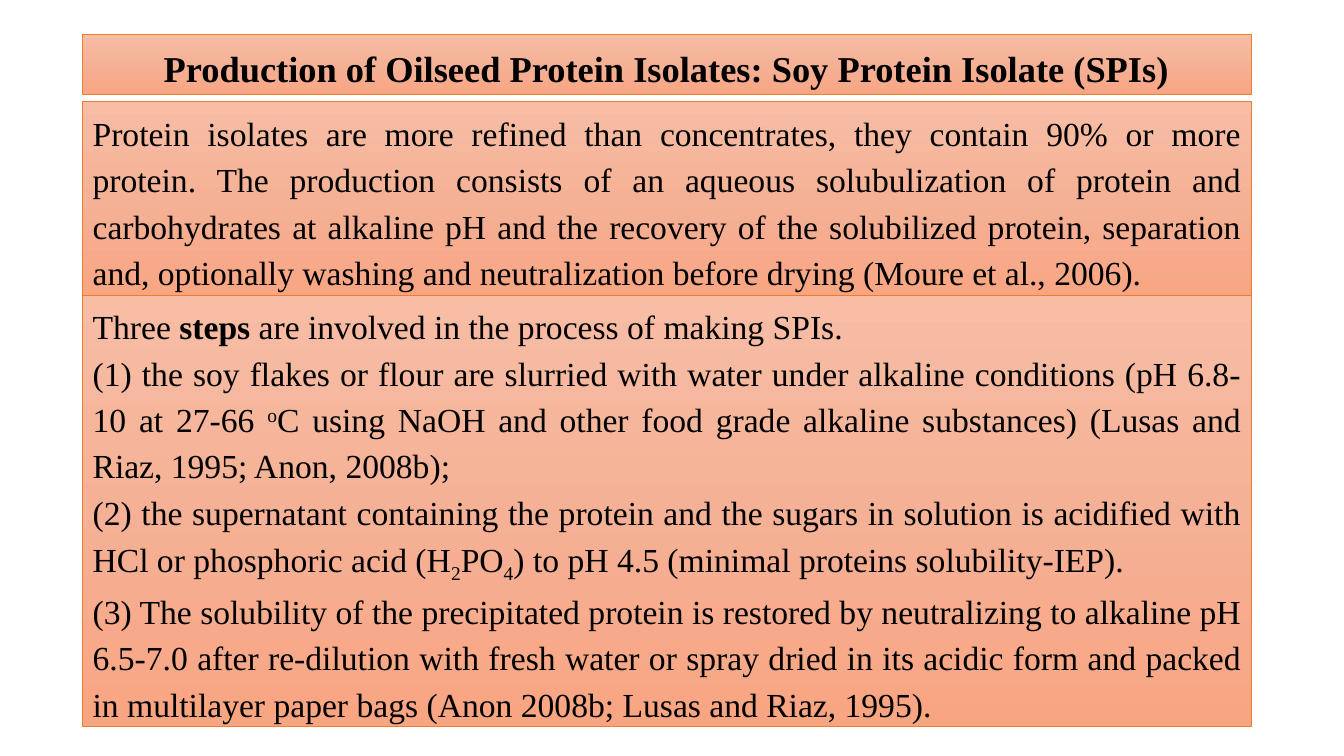
import copy

import pptx
import pptx.util
import pptx.dml.color
import pptx.enum.shapes
import pptx.enum.text
import pptx.oxml.ns

Inches, Pt = pptx.util.Inches, pptx.util.Pt
RGB = pptx.dml.color.RGBColor.from_string
ALIGN = pptx.enum.text.PP_ALIGN

# Content: each paragraph is a list of (text, style) runs
TITLE = [[("Production of Oilseed Protein Isolates: Soy Protein Isolate (SPIs)", "bold")]]
INTRO = [[(
    "Protein isolates are more refined than concentrates, they contain 90% or more "
    "protein. The production consists of an aqueous solubulization of protein and "
    "carbohydrates at alkaline pH and the recovery of the solubilized protein, "
    "separation and, optionally washing and neutralization before drying "
    "(Moure et al., 2006).", "plain")]]
STEPS = [
    [("Three ", "plain"), ("steps", "bold"),
     (" are involved in the process of making SPIs.", "plain")],
    [("(1) the soy flakes or flour are slurried with water under alkaline conditions "
      "(pH 6.8-10 at 27-66 ", "plain"), ("o", "super"),
     ("C using NaOH and other food grade alkaline substances) (Lusas and Riaz, 1995; "
      "Anon, 2008b);", "plain")],
    [("(2) the supernatant containing the protein and the sugars in solution is "
      "acidified with HCl or phosphoric acid (H", "plain"), ("2", "sub"),
     ("PO", "plain"), ("4", "sub"),
     (") to pH 4.5 (minimal proteins solubility-IEP).", "plain")],
    [("(3) The solubility of the precipitated protein is restored by neutralizing to "
      "alkaline pH 6.5-7.0 after re-dilution with fresh water or spray dried in its "
      "acidic form and packed in multilayer paper bags (Anon 2008b; Lusas and Riaz, "
      "1995).", "plain")],
]

THEME = {
    "font": "Times New Roman",
    "text": "000000",
    "line": "ED7D31",
    "gradient": [(0, "F7BDA5"), (0.5, "F5B196"), (1, "F8A582")],
    "title_size": 26,
    "body_size": 24,
}
BASELINE = {"super": "30000", "sub": "-25000"}

# Panels share one column: top, height, paragraphs, type size, paragraph format
LEFT, WIDTH = 0.82, 11.59
TITLE_FORMAT = {"alignment": ALIGN.CENTER, "line_spacing": 1.15, "space_after": Pt(10)}
BODY_FORMAT = {"alignment": ALIGN.JUSTIFY, "line_spacing": 1.15}
PANELS = [
    (0.34, 0.60, TITLE, THEME["title_size"], TITLE_FORMAT),
    (1.01, 1.96, INTRO, THEME["body_size"], BODY_FORMAT),
    (2.93, 4.28, STEPS, THEME["body_size"], BODY_FORMAT),
]


def set_all(target, values):
    for name, value in values.items():
        setattr(target, name, value)


def fill_gradient(s):
    s.fill.gradient()
    s.fill.gradient_angle = 270
    # The default gradient has two stops; add the middle one
    stops = s._element.spPr.find(".//" + pptx.oxml.ns.qn("a:gsLst"))
    stops.insert(1, copy.deepcopy(stops[0]))
    for stop, (position, color) in zip(s.fill.gradient_stops, THEME["gradient"]):
        stop.position = position
        stop.color.rgb = RGB(color)


def add_run(p, text, style, size):
    r = p.add_run()
    r.text = text
    set_all(r.font, {"name": THEME["font"], "size": Pt(size), "bold": style == "bold"})
    r.font.color.rgb = RGB(THEME["text"])
    if style in BASELINE:
        r._r.get_or_add_rPr().set("baseline", BASELINE[style])


def add_panel(slide, top, height, paragraphs, size, paragraph_format):
    s = slide.shapes.add_shape(
        pptx.enum.shapes.MSO_SHAPE.RECTANGLE,
        Inches(LEFT), Inches(top), Inches(WIDTH), Inches(height))
    s.shadow.inherit = False
    fill_gradient(s)
    s.line.color.rgb = RGB(THEME["line"])
    s.line.width = Pt(0.5)
    tf = s.text_frame
    set_all(tf, {
        "word_wrap": True,
        "auto_size": pptx.enum.text.MSO_AUTO_SIZE.SHAPE_TO_FIT_TEXT,
        "vertical_anchor": pptx.enum.text.MSO_ANCHOR.TOP,
    })
    for i, runs in enumerate(paragraphs):
        p = tf.add_paragraph() if i else tf.paragraphs[0]
        set_all(p, paragraph_format)
        for text, style in runs:
            add_run(p, text, style, size)


def main():
    prs = pptx.Presentation()
    prs.slide_width, prs.slide_height = Inches(13.33), Inches(7.5)
    slide = prs.slides.add_slide(prs.slide_layouts[6])
    for panel in PANELS:
        add_panel(slide, *panel)
    prs.save("out.pptx")


if __name__ == "__main__":
    main()
